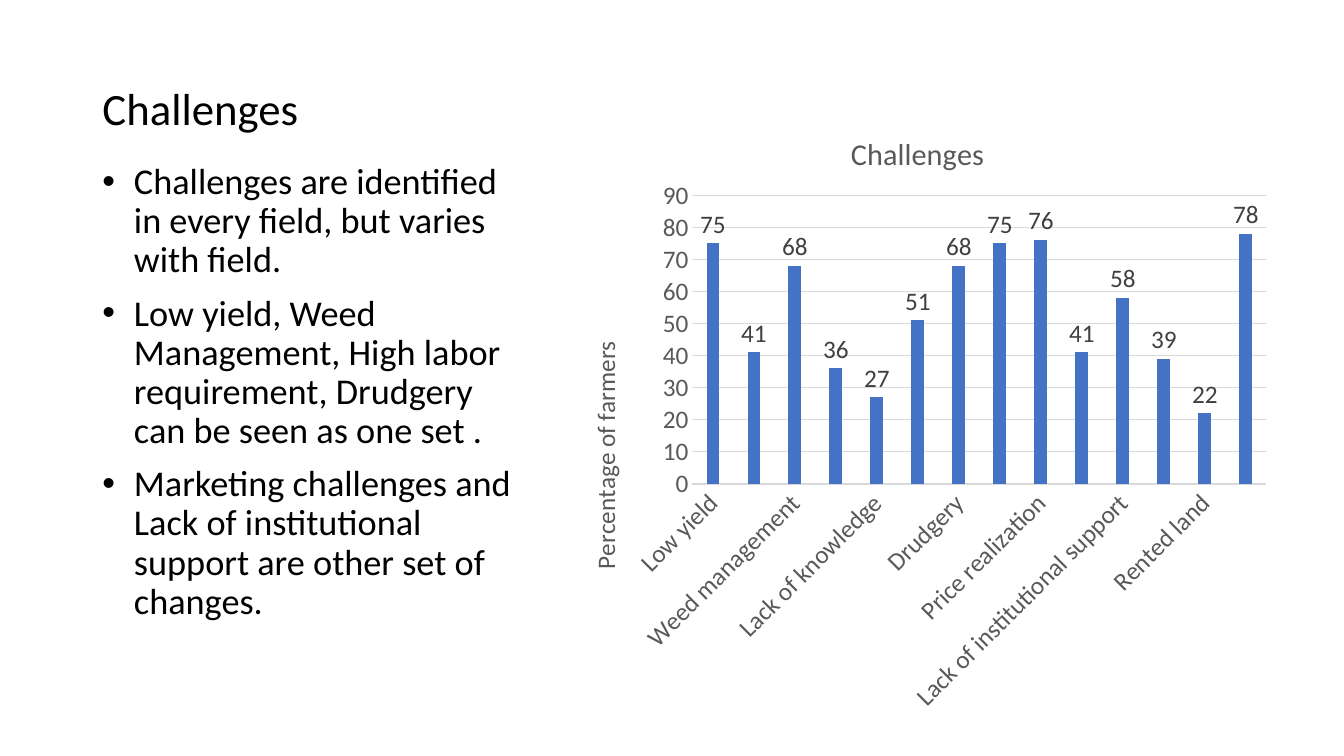
from dataclasses import dataclass

from lxml.etree import SubElement
from pptx import Presentation
from pptx.chart.data import CategoryChartData
from pptx.dml.color import RGBColor
from pptx.enum.chart import XL_CHART_TYPE as ChartType
from pptx.enum.chart import XL_LABEL_POSITION as LabelPosition
from pptx.enum.chart import XL_TICK_MARK as TickMark
from pptx.enum.text import MSO_ANCHOR as Anchor
from pptx.enum.text import MSO_AUTO_SIZE as AutoSize
from pptx.enum.text import PP_ALIGN as Align
from pptx.oxml.ns import qn
from pptx.util import Pt


@dataclass(frozen=True)
class Theme:
    font: str = "Calibri"
    text: str = "000000"
    chart_text: str = "595959"
    label_text: str = "404040"
    grid: str = "D9D9D9"
    bar: str = "4472C4"
    title_size: float = 32
    body_size: float = 25.9
    chart_title_size: float = 21.6
    chart_size: float = 18


BULLETS = [
    "Challenges are identified in every field, but varies with field.",
    "Low yield, Weed Management, High labor requirement, Drudgery can be seen as one set .",
    "Marketing challenges and Lack of institutional support are other set of changes.",
]

FARMER_SHARES = {
    "Low yield": 75,
    "Pest and disease": 41,
    "Weed management": 68,
    "Access to organic inputs": 36,
    "Lack of knowledge": 27,
    "High labour requirment": 51,
    "Drudgery": 68,
    "Marketing challenges": 75,
    "Price realization": 76,
    "Difficulty in livestock management in OF ": 41,
    "Lack of institutional support": 58,
    "Irrigation constraints": 39,
    "Rented land": 22,
    "Peer pressure": 78,
}


class SlideBuilder:
    def __init__(self, slide, theme):
        self.slide = slide
        self.theme = theme

    def style(self, font, size, color):
        font.name = self.theme.font
        font.size = Pt(size)
        font.bold = False
        font.color.rgb = RGBColor.from_string(color)

    def line(self, line_format):
        line_format.color.rgb = RGBColor.from_string(self.theme.grid)
        line_format.width = Pt(0.75)

    def run(self, paragraph, text, size, color):
        run = paragraph.add_run()
        run.text = text
        self.style(run.font, size, color)

    def place(self, shape, box, anchor):
        shape.left, shape.top, shape.width, shape.height = map(Pt, box)
        frame = shape.text_frame
        frame.word_wrap = True
        frame.auto_size = AutoSize.NONE
        frame.vertical_anchor = anchor
        return frame

    def title(self, text, box):
        frame = self.place(self.slide.shapes.title, box, Anchor.BOTTOM)
        paragraph = frame.paragraphs[0]
        paragraph.alignment = Align.LEFT
        paragraph.line_spacing = 0.9
        self.run(paragraph, text, self.theme.title_size, self.theme.text)

    def bullets(self, items, box):
        frame = self.place(self.slide.placeholders[1], box, Anchor.TOP)
        for index, item in enumerate(items):
            paragraph = frame.add_paragraph() if index else frame.paragraphs[0]
            paragraph.line_spacing = 0.9
            paragraph.space_before = Pt(10)
            properties = paragraph._p.get_or_add_pPr()
            properties.set("marL", str(Pt(22.5)))
            properties.set("indent", str(-Pt(22.5)))
            SubElement(properties, qn("a:buFont")).set("typeface", "Arial")
            SubElement(properties, qn("a:buChar")).set("char", "•")
            self.run(paragraph, item, self.theme.body_size, self.theme.text)

    def layout(self, parent, **settings):
        """Fix the place of a chart part, in fractions of the chart."""
        layout = parent.find(qn("c:layout"))
        if layout is None:
            layout = SubElement(parent, qn("c:layout"))
            parent.insert(0, layout)
        manual = SubElement(layout, qn("c:manualLayout"))
        for name, value in settings.items():
            SubElement(manual, qn(f"c:{name}")).set("val", str(value))

    def chart_heading(self, heading, text, size):
        frame = heading.text_frame
        self.run(frame.paragraphs[0], text, size, self.theme.chart_text)
        return frame

    def column_chart(self, heading, axis_heading, shares, box):
        theme = self.theme
        data = CategoryChartData(number_format="0")
        data.categories = list(shares)
        data.add_series("Series 1", list(shares.values()))
        chart = self.slide.shapes.add_chart(
            ChartType.COLUMN_CLUSTERED, *map(Pt, box), data
        ).chart
        self.style(chart.font, theme.chart_size, theme.text)
        chart.has_legend = False
        chart.has_title = True
        self.chart_heading(chart.chart_title, heading, theme.chart_title_size)
        self.layout(
            chart._chartSpace.chart.plotArea,
            layoutTarget="inner", xMode="edge", yMode="edge",
            x=0.19, y=0.14, w=0.79, h=0.47,
        )

        # Columns and their values
        plot = chart.plots[0]
        plot.gap_width = 219
        plot.overlap = -27
        plot.vary_by_categories = False
        fill = plot.series[0].format.fill
        fill.solid()
        fill.fore_color.rgb = RGBColor.from_string(theme.bar)
        plot.has_data_labels = True
        labels = plot.data_labels
        labels.show_value = True
        labels.position = LabelPosition.OUTSIDE_END
        labels.number_format = "0"
        labels.number_format_is_linked = False
        self.style(labels.font, theme.chart_size, theme.label_text)

        # Axes
        category_axis, value_axis = chart.category_axis, chart.value_axis
        for axis in (category_axis, value_axis):
            axis.major_tick_mark = axis.minor_tick_mark = TickMark.NONE
            self.style(axis.tick_labels.font, theme.chart_size, theme.chart_text)
        self.line(category_axis.format.line)
        slant = category_axis._element.find(qn("c:txPr")).find(qn("a:bodyPr"))
        slant.set("rot", "-2700000")
        slant.set("vert", "horz")

        value_axis.minimum_scale = 0
        value_axis.maximum_scale = 90
        value_axis.major_unit = 10
        value_axis.format.line.fill.background()
        value_axis.has_major_gridlines = True
        self.line(value_axis.major_gridlines.format.line)
        value_axis.tick_labels.number_format = "0"
        value_axis.tick_labels.number_format_is_linked = False

        # Upright heading of the value axis
        frame = self.chart_heading(value_axis.axis_title, axis_heading, theme.chart_size)
        upright = frame._txBody.find(qn("a:bodyPr"))
        upright.set("rot", "-5400000")
        upright.set("vert", "horz")
        self.layout(
            value_axis.axis_title._element,
            xMode="edge", yMode="edge", x=0.04, y=0.37,
        )


def main():
    presentation = Presentation()
    presentation.slide_width, presentation.slide_height = Pt(960), Pt(540)
    slide = presentation.slides.add_slide(presentation.slide_layouts[1])
    builder = SlideBuilder(slide, Theme())

    # Text on the left
    builder.title("Challenges", (66, 36, 310, 64))
    builder.bullets(BULLETS, (66, 113, 310, 349))

    # Chart on the right
    builder.column_chart(
        "Challenges", "Percentage of farmers", FARMER_SHARES, (396, 78, 519, 439)
    )
    presentation.save("out.pptx")


if __name__ == "__main__":
    main()
